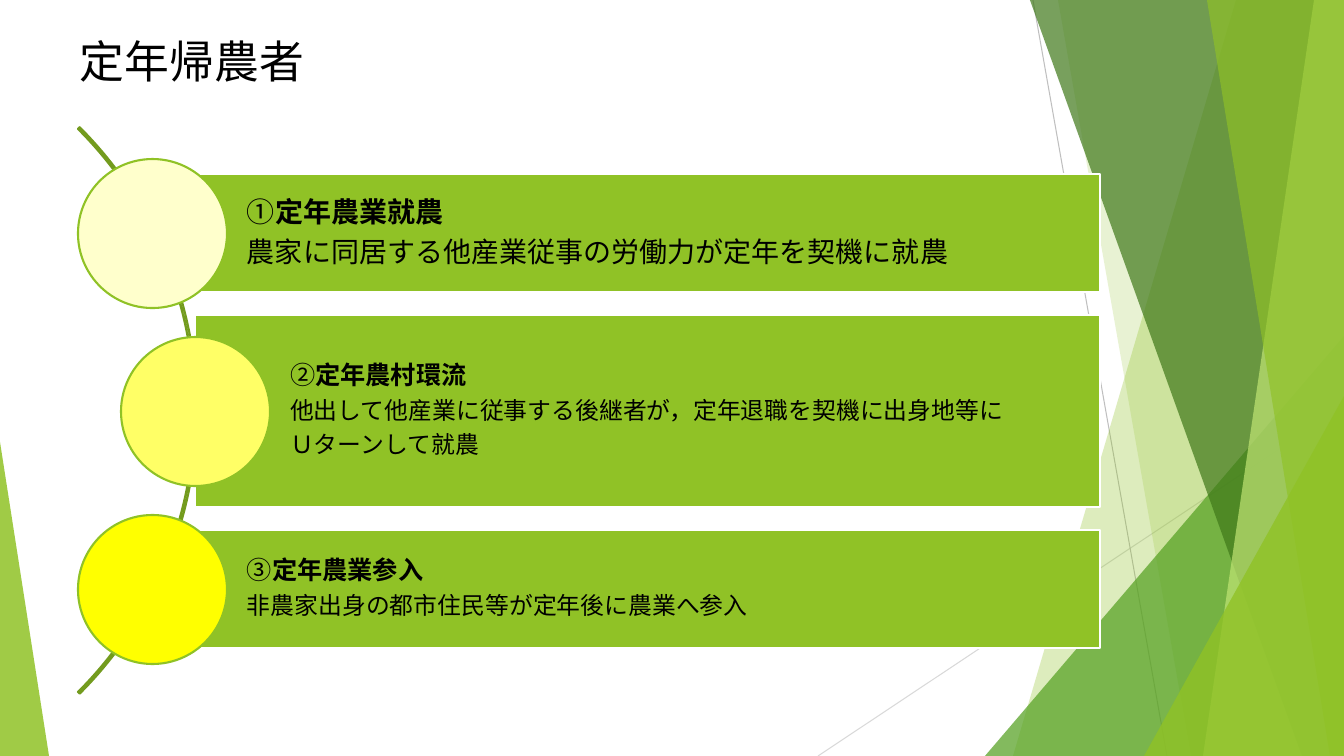
from dataclasses import dataclass
from lxml.etree import SubElement
from pptx import Presentation
from pptx.dml.color import RGBColor
from pptx.enum.shapes import MSO_CONNECTOR, MSO_SHAPE
from pptx.enum.text import MSO_ANCHOR, PP_ALIGN
from pptx.oxml.ns import qn
from pptx.util import Pt

SCALE = 914400 / 100.8
WIDE, HIGH = 1344, 756


def px(n):
    return round(n * SCALE)


@dataclass(frozen=True)
class Theme:
    green: str = "90C226"
    leaf: str = "54A021"
    pine: str = "3F7819"
    lime: str = "C0E474"
    moss: str = "739B1E"
    white: str = "FFFFFF"
    ink: str = "000000"
    pale: str = "D9D9D9"
    grey: str = "BFBFBF"
    dots: tuple = ("FFFFCC", "FFFF66", "FFFF00")
    latin: str = "Roboto"
    asian: str = "Noto Sans CJK JP"
    title: int = 32
    large: int = 20
    head: int = 18
    body: int = 17
    edge: float = 1.5
    hair: float = 0.75


class Board:
    def __init__(self, slide, theme):
        self.shapes = slide.shapes
        self.theme = theme

    def paint(self, shape, fill=None, line=None, alpha=100):
        shape.shadow.inherit = False
        if fill:
            shape.fill.solid()
            shape.fill.fore_color.rgb = RGBColor.from_string(fill)
            if alpha < 100:
                color = shape.fill._xPr.find(".//" + qn("a:srgbClr"))
                SubElement(color, qn("a:alpha"), val=str(alpha * 1000))
        else:
            shape.fill.background()
        if line:
            shape.line.color.rgb = RGBColor.from_string(line)
            shape.line.width = Pt(self.theme.edge)
        else:
            shape.line.fill.background()

    def shape(self, kind, x, y, w, h, fill=None, line=None):
        item = self.shapes.add_shape(kind, px(x), px(y), px(w), px(h))
        self.paint(item, fill, line)
        return item

    def line(self, start, end, color):
        item = self.shapes.add_connector(
            MSO_CONNECTOR.STRAIGHT, *map(px, start + end))
        item.line.color.rgb = RGBColor.from_string(color)
        item.line.width = Pt(self.theme.hair)
        SubElement(item._element.spPr, qn("a:effectLst"))

    def facet(self, points, fill, alpha):
        spots = [(px(x), px(y)) for x, y in points]
        pen = self.shapes.build_freeform(*spots[0])
        pen.add_line_segments(spots[1:], close=True)
        self.paint(pen.convert_to_shape(), fill, alpha=alpha)

    def frame(self, shape, left, top, right, bottom):
        frame = shape.text_frame
        frame.word_wrap = True
        frame.vertical_anchor = MSO_ANCHOR.MIDDLE
        frame.margin_left, frame.margin_top = px(left), px(top)
        frame.margin_right, frame.margin_bottom = px(right), px(bottom)
        return frame

    def run(self, para, text, size, font, bold=False):
        run = para.add_run()
        run.text = text
        run.font.size = Pt(size)
        run.font.bold = bold
        run.font.color.rgb = RGBColor.from_string(self.theme.ink)
        run.font.name = font
        SubElement(run.font._element, qn("a:ea"), typeface=self.theme.asian)

    def title(self, text, x, y, w, h):
        box = self.shapes.add_textbox(px(x), px(y), px(w), px(h))
        para = self.frame(box, 10, 0, 10, 0).paragraphs[0]
        self.run(para, text, self.theme.title, self.theme.asian)

    def bar(self, x, y, w, h, rows):
        item = self.shape(MSO_SHAPE.RECTANGLE, x, y, w, h,
                          self.theme.green, self.theme.white)
        frame = self.frame(item, 95, 6, 6, 6)
        for i, row in enumerate(rows):
            para = frame.add_paragraph() if i else frame.paragraphs[0]
            para.alignment = PP_ALIGN.LEFT
            para.line_spacing = 0.9
            after = SubElement(para._p.get_or_add_pPr(), qn("a:spcAft"))
            SubElement(after, qn("a:spcPct"), val="35000")
            for text, size, bold in row:
                self.run(para, text, size, self.theme.latin, bold)

    def arc(self, x, y, size):
        item = self.shape(MSO_SHAPE.BLOCK_ARC, x, y, size, size,
                          line=self.theme.moss)
        for i, value in enumerate((189, 27, 0.003)):
            item.adjustments[i] = value


def main():
    deck = Presentation()
    deck.slide_width, deck.slide_height = px(WIDE), px(HIGH)
    theme = Theme()
    board = Board(deck.slides.add_slide(deck.slide_layouts[6]), theme)

    board.line((818, HIGH), (WIDE, 406), theme.pale)
    board.line((1033, 0), (1167, HIGH), theme.grey)

    bands = [
        (1236, 0, 1013, theme.green, 30),
        (1058, 0, 1191, theme.green, 20),
        (WIDE, 336, 985, theme.leaf, 72),
        (1030, 0, 1302, theme.pine, 70),
        (1314, 0, 1203, theme.lime, 70),
        (1207, 0, 1330, theme.green, 65),
        (WIDE, 396, 1144, theme.green, 80),
    ]
    for x, y, foot, fill, alpha in bands:
        points = [(x, y), (foot, HIGH), (WIDE, HIGH)]
        if x < WIDE:
            points.append((WIDE, y))
        board.facet(points, fill, alpha)
    board.facet([(0, 442), (49, HIGH), (0, HIGH)], theme.green, 85)

    board.title("定年帰農者", 70, 26, 948, 70)
    board.arc(-604, 10, 801)

    items = [
        (152, 118, theme.large, theme.large, "①", "定年農業就農",
         ["農家に同居する他産業従事の労働力が定年を契機に就農"]),
        (195, 192, theme.head, theme.body, "②", "定年農村環流",
         ["他出して他産業に従事する後継者が，定年退職を契機に出身地等に",
          "Ｕターンして就農"]),
        (152, 118, theme.head, theme.body, "③", "定年農業参入",
         ["非農家出身の都市住民等が定年後に農業へ参入"]),
    ]
    right, first, pitch, dot = 1100, 233, 178, 149
    for i, (x, tall, head, body, mark, name, notes) in enumerate(items):
        mid = first + i * pitch
        rows = [[(mark, head, False), (name, head, True)]]
        rows += [[(note, body, False)] for note in notes]
        board.bar(x, mid - tall // 2, right - x, tall, rows)
        board.shape(MSO_SHAPE.OVAL, x - dot // 2, mid - dot // 2, dot, dot,
                    theme.dots[i], theme.green)

    deck.save("out.pptx")


if __name__ == "__main__":
    main()
